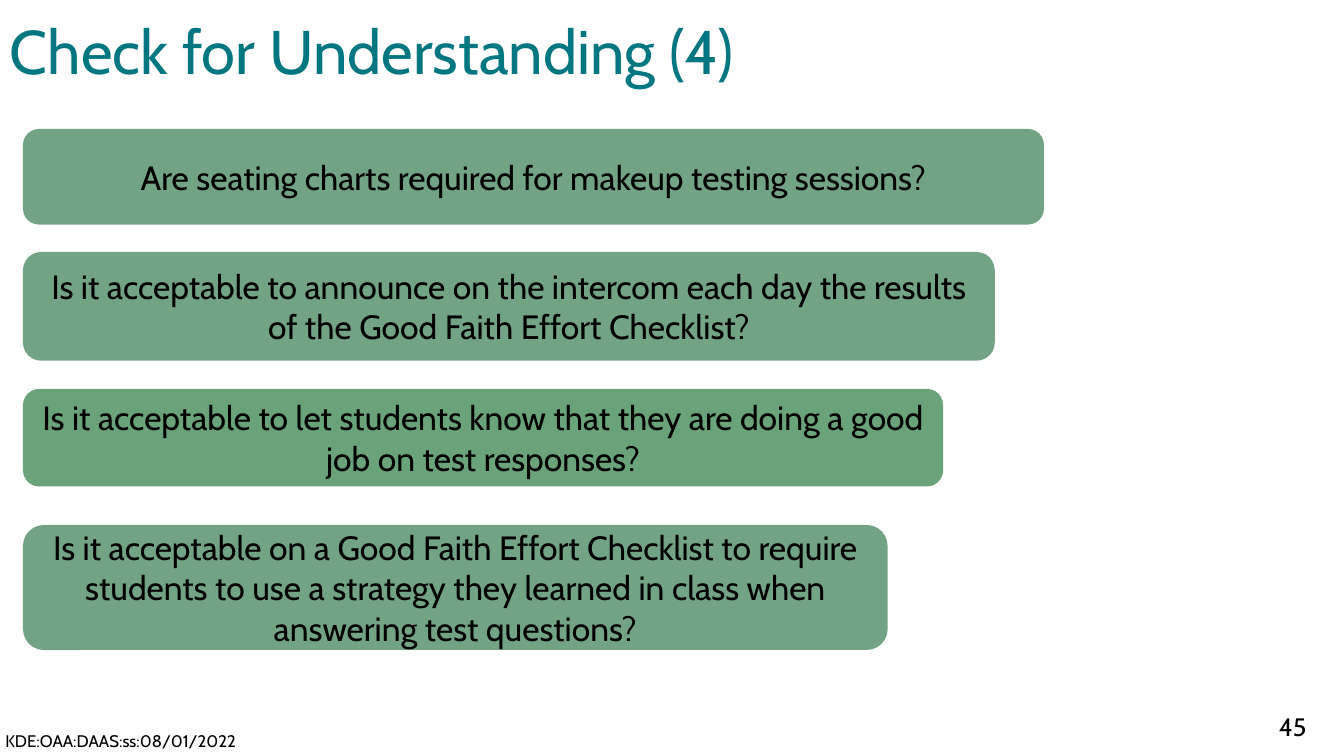
from dataclasses import dataclass

from pptx import Presentation
from pptx.dml.color import RGBColor
from pptx.enum.shapes import MSO_SHAPE
from pptx.enum.text import MSO_ANCHOR, PP_ALIGN
from pptx.slide import Slide
from pptx.util import Cm, Pt

ROUNDED = MSO_SHAPE.ROUNDED_RECTANGLE
TOP, MIDDLE = MSO_ANCHOR.TOP, MSO_ANCHOR.MIDDLE
LEFT, CENTER = PP_ALIGN.LEFT, PP_ALIGN.CENTER


@dataclass(frozen=True)
class Theme:
    font: str = "Cabin"
    title: str = "007780"
    text: str = "000000"
    sage: str = "73A385"
    green: str = "6AA27A"
    title_size: int = 44
    question_size: int = 24
    number_size: int = 18
    footer_size: int = 12


THEME = Theme()
QUESTION_LEFT = 0.58


@dataclass(frozen=True)
class Question:
    text: str
    top: float
    width: float
    height: float
    fill: str = THEME.sage


@dataclass(frozen=True)
class Label:
    text: str
    box: tuple[float, float, float, float]
    size: int
    color: str = THEME.text
    align: PP_ALIGN = LEFT
    anchor: MSO_ANCHOR = MIDDLE
    line_spacing: float = 1.0


QUESTIONS = [
    Question("Are seating charts required for makeup testing sessions?",
             3.25, 25.73, 2.41),
    Question("Is it acceptable to announce on the intercom each day the results "
             "of the Good Faith Effort Checklist?", 6.35, 24.49, 2.74),
    Question("Is it acceptable to let students know that they are doing a good "
             "job on test responses?", 9.8, 23.19, 2.46, THEME.green),
    Question("Is it acceptable on a Good Faith Effort Checklist to require "
             "students to use a strategy they learned in class when "
             "answering test questions?", 13.23, 21.79, 3.15),
]

LABELS = [
    Label("Check for Understanding (4)", (0, 0, 25.07, 2.74),
          THEME.title_size, THEME.title, line_spacing=0.9),
    Label("45", (31.98, 17.81, 1.9, 1.02), THEME.number_size, anchor=TOP),
    Label("KDE:OAA:DAAS:ss:08/01/2022", (-0.89, 18.31, 7.87, 0.74),
          THEME.footer_size, align=CENTER),
]


def write_text(shape, label: Label) -> None:
    tf = shape.text_frame
    tf.word_wrap = True
    tf.vertical_anchor = label.anchor
    p = tf.paragraphs[0]
    p.alignment = label.align
    p.line_spacing = label.line_spacing
    r = p.add_run()
    r.text = label.text
    for name, value in {"name": THEME.font, "size": Pt(label.size)}.items():
        setattr(r.font, name, value)
    r.font.color.rgb = RGBColor.from_string(label.color)


def add_label(s: Slide, label: Label) -> None:
    write_text(s.shapes.add_textbox(*map(Cm, label.box)), label)


def add_question(s: Slide, question: Question) -> None:
    box = (QUESTION_LEFT, question.top, question.width, question.height)
    sp = s.shapes.add_shape(ROUNDED, *map(Cm, box))
    sp.shadow.inherit = False
    sp.fill.solid()
    sp.fill.fore_color.rgb = RGBColor.from_string(question.fill)
    sp.line.fill.background()
    write_text(sp, Label(question.text, box, THEME.question_size, align=CENTER))


def main() -> None:
    prs = Presentation()
    prs.slide_width, prs.slide_height = Cm(33.87), Cm(19.05)
    s = prs.slides.add_slide(prs.slide_layouts[6])
    for label in LABELS:
        add_label(s, label)
    for question in QUESTIONS:
        add_question(s, question)
    prs.save("out.pptx")


if __name__ == "__main__":
    main()
